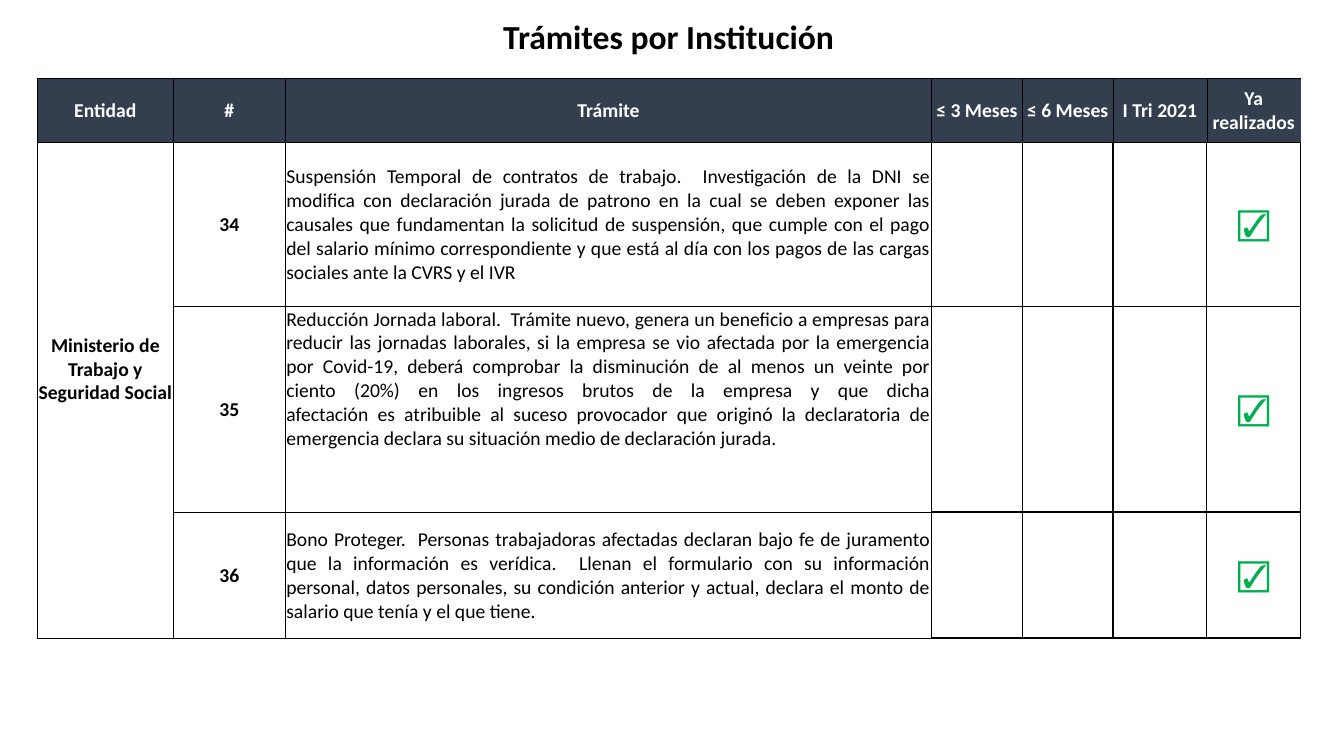
from pptx import Presentation
from pptx.dml.color import RGBColor
from pptx.enum.text import MSO_ANCHOR, PP_ALIGN
from pptx.oxml.ns import qn
from pptx.util import Inches, Pt
from lxml import etree

CENTER, JUSTIFY = PP_ALIGN.CENTER, PP_ALIGN.JUSTIFY
TOP, MIDDLE = MSO_ANCHOR.TOP, MSO_ANCHOR.MIDDLE

BLACK = RGBColor(0x00, 0x00, 0x00)
WHITE = RGBColor(0xFF, 0xFF, 0xFF)
NAVY = RGBColor(0x33, 0x3F, 0x4F)
GREEN = RGBColor(0x00, 0xB0, 0x50)

THIN, THICK = Pt(0.5), Pt(1)
COLUMN_WIDTHS = [1.35, 1.11, 6.41, 0.9, 0.9, 0.93, 0.93]
ROW_HEIGHTS = [0.63, 1.63, 2.04, 1.25]
PROCEDURE, FIRST_TERM, DONE = 2, 3, 6

HEADINGS = ["Entidad", "#", "Trámite", "≤ 3 Meses", "≤ 6 Meses", "I Tri 2021", "Ya realizados"]
ENTITY = "Ministerio de Trabajo y Seguridad Social "
PROCEDURES = [
    ("34", MIDDLE, "Suspensión Temporal de contratos de trabajo.  Investigación de la DNI se "
     "modifica con declaración jurada de patrono en la cual se deben exponer las causales que "
     "fundamentan la solicitud de suspensión, que cumple con el pago del salario mínimo "
     "correspondiente y que está al día con los pagos de las cargas sociales ante la CVRS y el IVR"),
    ("35", TOP, "Reducción Jornada laboral.  Trámite nuevo, genera un beneficio a empresas para "
     "reducir las jornadas laborales, si la empresa se vio afectada por la emergencia por "
     "Covid-19, deberá comprobar la disminución de al menos un veinte por ciento (20%) en los "
     "ingresos brutos de la empresa y que dicha\n"
     "afectación es atribuible al suceso provocador que originó la declaratoria de emergencia "
     "declara su situación medio de declaración jurada."),
    ("36", MIDDLE, "Bono Proteger.  Personas trabajadoras afectadas declaran bajo fe de juramento "
     "que la información es verídica.  Llenan el formulario con su información personal, datos "
     "personales, su condición anterior y actual, declara el monto de salario que tenía y el que "
     "tiene."),
]


def write(frame, text, size=14, color=BLACK, bold=True, font="Calibri", align=CENTER):
    para = frame.paragraphs[0]
    para.alignment = align
    for index, line in enumerate(text.split("\n")):
        if index:
            para.add_line_break()
        span = para.add_run()
        span.text = line
        span.font.name = font
        span.font.size = Pt(size)
        span.font.bold = bold
        span.font.color.rgb = color
    return para


def set_borders(cell, widths):
    properties = cell._tc.get_or_add_tcPr()
    for side in "LRTB":
        line = etree.SubElement(properties, qn(f"a:ln{side}"), w=str(widths[side]))
        if widths[side]:
            fill = etree.SubElement(line, qn("a:solidFill"))
            etree.SubElement(fill, qn("a:srgbClr"), val=str(BLACK))
        else:
            etree.SubElement(line, qn("a:noFill"))


def border_widths(row, column):
    """Thick lines surround the term columns below the heading row."""
    if row == 0:
        widths = dict.fromkeys("LRTB", THIN)
        if column >= FIRST_TERM:
            widths["B"] = THICK
        if column == DONE:
            widths["R"] = 0
        return widths
    widths = dict.fromkeys("LRTB", THICK if column >= FIRST_TERM else THIN)
    if column == PROCEDURE:
        widths["R"] = THICK
    return widths


def add_title(page, left, top, width, height):
    box = page.shapes.add_textbox(left, top, width, height)
    frame = box.text_frame
    frame.word_wrap = True
    frame.vertical_anchor = MIDDLE
    para = write(frame, "Trámites por Institución ", size=24)
    para.line_spacing = 0.9


def add_procedure_table(page, left, top, width, height):
    table = page.shapes.add_table(len(ROW_HEIGHTS), len(COLUMN_WIDTHS),
                                  left, top, width, height).table
    table.horz_banding = False
    table.first_row = False
    for column, size in zip(table.columns, COLUMN_WIDTHS):
        column.width = Inches(size)
    for row, size in zip(table.rows, ROW_HEIGHTS):
        row.height = Inches(size)

    # Margins, borders and fills
    for r in range(len(ROW_HEIGHTS)):
        for c in range(len(COLUMN_WIDTHS)):
            cell = table.cell(r, c)
            cell.margin_left = cell.margin_right = cell.margin_top = Inches(0.01)
            cell.margin_bottom = 0
            cell.vertical_anchor = MIDDLE
            set_borders(cell, border_widths(r, c))
            if r == 0:
                cell.fill.solid()
                cell.fill.fore_color.rgb = NAVY
            else:
                cell.fill.background()

    # Heading row
    for c, heading in enumerate(HEADINGS):
        write(table.cell(0, c).text_frame, heading, color=WHITE)

    # Entity, set a little above the middle of its merged cell
    entity = table.cell(1, 0)
    entity.merge(table.cell(len(PROCEDURES), 0))
    entity.margin_bottom = Inches(0.42)
    write(entity.text_frame, ENTITY)

    # One row per procedure
    for r, (number, anchor, description) in enumerate(PROCEDURES, start=1):
        write(table.cell(r, 1).text_frame, number)
        cell = table.cell(r, PROCEDURE)
        cell.vertical_anchor = anchor
        write(cell.text_frame, description, bold=False, align=JUSTIFY)
        write(table.cell(r, DONE).text_frame, "☑", size=23, color=GREEN, font="Arial")


def main():
    deck = Presentation()
    deck.slide_width, deck.slide_height = Inches(13.33), Inches(7.5)
    page = deck.slides.add_slide(deck.slide_layouts[6])
    add_title(page, Inches(0.92), Inches(0.14), Inches(11.5), Inches(0.48))
    add_procedure_table(page, Inches(0.37), Inches(0.78), Inches(12.53), Inches(5.55))
    deck.save("out.pptx")


if __name__ == "__main__":
    main()
